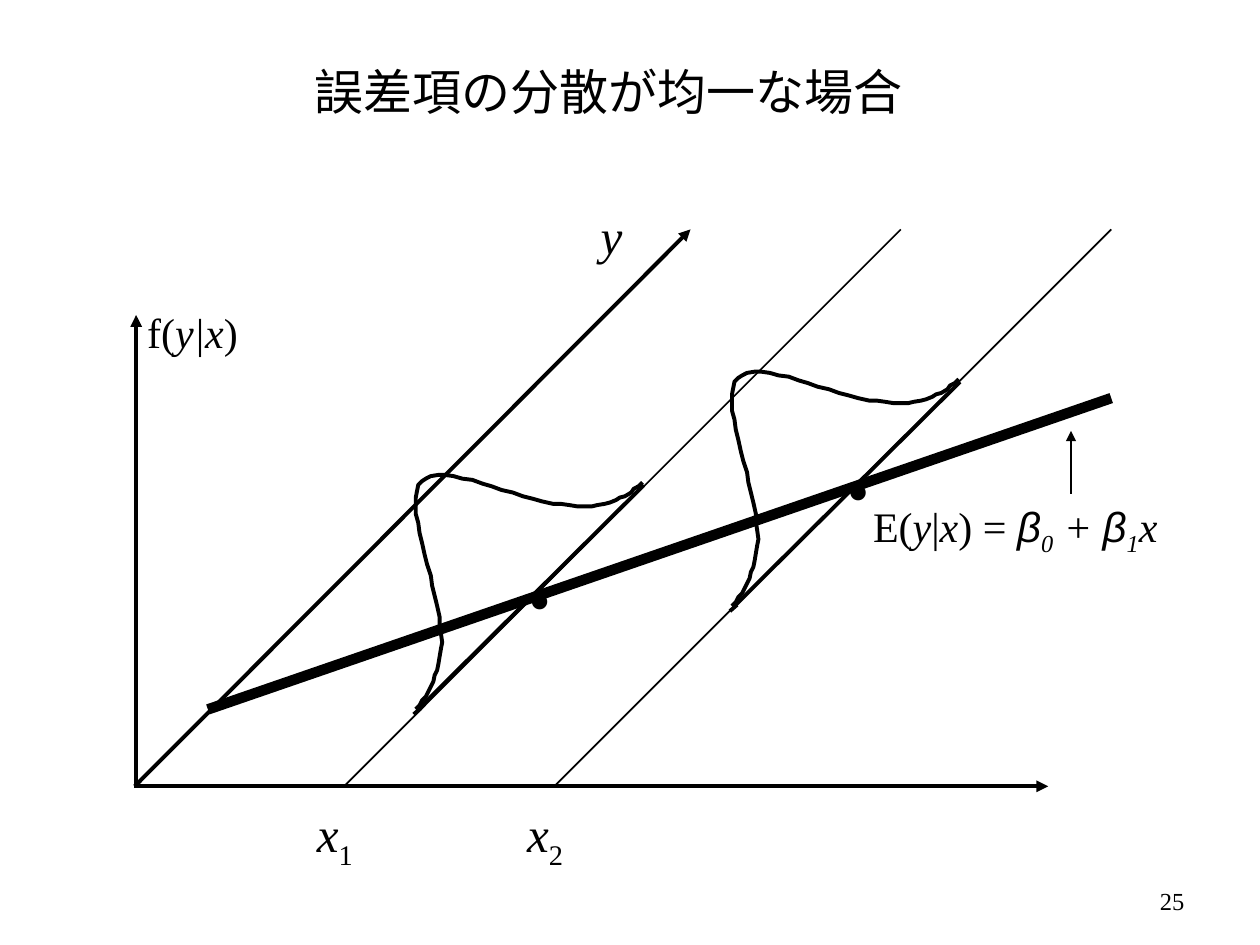
from lxml import etree
from pptx import Presentation
from pptx import util as u
from pptx.dml.color import RGBColor
from pptx.enum import shapes, text
from pptx.oxml import ns

INK = RGBColor(0, 0, 0)
SERIF, SANS = "Times New Roman", "Arial"
ITALIC = {"italic": True}
SUBSCRIPT = -25000

BASELINE_Y = 449.3
ORIGIN_X = 77
DEPTH = 318.2
BELL_CORNERS = [(237.6, 271.4), (418.3, 212.4)]
BELL_UNIT = u.Pt(0.72)
BELL_OUTLINE = [
    (0, 186), (3, 183), (5, 179), (8, 176), (10, 172), (12, 168), (14, 164),
    (15, 159), (17, 155), (18, 150), (19, 144), (20, 138), (21, 133), (20, 126),
    (19, 119), (19, 113), (17, 104), (15, 96), (13, 88), (12, 80), (9, 71),
    (7, 63), (5, 54), (3, 46), (2, 38), (0, 31), (0, 24), (0, 18), (1, 13),
    (2, 8), (5, 5), (8, 3), (12, 1), (18, 0), (23, 0), (30, 1), (37, 3),
    (45, 4), (53, 7), (60, 9), (68, 12), (77, 14), (85, 17), (93, 19),
    (100, 21), (109, 23), (115, 23), (122, 24), (128, 25), (134, 25), (140, 25),
    (144, 24), (150, 23), (154, 22), (159, 20), (162, 18), (166, 17), (171, 14),
    (173, 11), (177, 9), (180, 6),
]


def apply_format(target, values):
    for attribute, value in values.items():
        setattr(target, attribute, value)


def add_line(slide, start, end, weight, arrow=False):
    ends = [u.Pt(value) for value in (*start, *end)]
    line = slide.shapes.add_connector(shapes.MSO_CONNECTOR.STRAIGHT, *ends)
    line.line.color.rgb = INK
    line.line.width = u.Pt(weight)
    properties = line._element.spPr
    if arrow:
        stroke = properties.find(ns.qn("a:ln"))
        etree.SubElement(stroke, ns.qn("a:tailEnd"), type="triangle")
    etree.SubElement(properties, ns.qn("a:effectLst"))


def add_label(slide, box, pieces, size, bold=None, frame_format=None, align=None):
    label = slide.shapes.add_textbox(*[u.Pt(value) for value in box])
    apply_format(label.text_frame, {
        "word_wrap": False,
        "auto_size": text.MSO_AUTO_SIZE.SHAPE_TO_FIT_TEXT,
        **(frame_format or {}),
    })
    paragraph = label.text_frame.paragraphs[0]
    paragraph.alignment = align
    for wording, font_format, *shift in pieces:
        run = paragraph.add_run()
        run.text = wording
        apply_format(run.font, {
            "name": SERIF, "size": u.Pt(size), "bold": bold, **font_format,
        })
        run.font.color.rgb = INK
        if shift:
            run._r.get_or_add_rPr().set("baseline", str(shift[0]))


def add_bell(slide, left, top):
    add_line(slide, (left - 1.2, top + 136.8), (left + 2.9, top + 133.2), 2.25)
    add_line(slide, (left + 0.7, top + 134.6), (left + 130.3, top + 5.8), 2.25)
    builder = slide.shapes.build_freeform(*BELL_OUTLINE[0], scale=BELL_UNIT)
    builder.add_line_segments(BELL_OUTLINE[1:], close=False)
    bell = builder.convert_to_shape(u.Pt(left), u.Pt(top))
    bell.shadow.inherit = False
    bell.fill.background()
    bell.line.color.rgb = INK
    bell.line.width = u.Pt(2.25)


def add_axes(slide):
    origin = (ORIGIN_X, BASELINE_Y)
    add_line(slide, origin, (599, BASELINE_Y), 2.25, arrow=True)
    add_line(slide, origin, (394.6, BASELINE_Y - DEPTH), 2.25, arrow=True)
    add_line(slide, (77.8, 450), (77.8, 180), 2.25, arrow=True)
    add_label(slide, (336.2, 113.8, 26.6, 41), [("y", ITALIC)], 28)
    add_label(slide, (ORIGIN_X, 171.4, 66.2, 36),
              [("f(", {}), ("y|x", ITALIC), (")", {})], 24)


def add_x_levels(slide):
    for index, foot in enumerate((196.6, 316.8), start=1):
        add_line(slide, (foot, BASELINE_Y), (foot + DEPTH, BASELINE_Y - DEPTH), 1)
        add_label(slide, (foot - 22.6, 455.8, 36, 40.3),
                  [("x", ITALIC), (str(index), {}, SUBSCRIPT)], 28)


def add_regression(slide):
    add_line(slide, (118.8, 405.4), (635, 227.5), 6)
    for left, top in ((476.6, 228.2), (294.5, 290.2)):
        add_label(slide, (left, top, 28.1, 72), [(".", {})], 54, bold=True)
    beta = ("β", {"name": SANS, **ITALIC})
    equation = [
        ("E(", {}), ("y", ITALIC), ("|", {}), ("x", ITALIC), (") = ", {}),
        beta, ("0", ITALIC, SUBSCRIPT), (" + ", ITALIC),
        beta, ("1", ITALIC, SUBSCRIPT), ("x", ITALIC),
    ]
    add_label(slide, (491.8, 282.2, 186.5, 36.7), equation, 24)
    add_line(slide, (612, 282.2), (612, 246.2), 0.75, arrow=True)


def main():
    deck = Presentation()
    apply_format(deck, {"slide_width": u.Pt(720), "slide_height": u.Pt(540)})
    slide = deck.slides.add_slide(deck.slide_layouts[6])
    add_label(slide, (172.8, 31.7, 351.4, 41), [("誤差項の分散が均一な場合", {})], 28)
    add_axes(slide)
    add_x_levels(slide)
    add_regression(slide)
    for corner in BELL_CORNERS:
        add_bell(slide, *corner)
    page_format = {
        "word_wrap": True,
        "auto_size": text.MSO_AUTO_SIZE.NONE,
        "vertical_anchor": text.MSO_ANCHOR.MIDDLE,
    }
    add_label(slide, (516.2, 500.4, 167.8, 28.8), [("25", {})], 14,
              frame_format=page_format, align=text.PP_ALIGN.RIGHT)
    deck.save("out.pptx")


if __name__ == "__main__":
    main()
